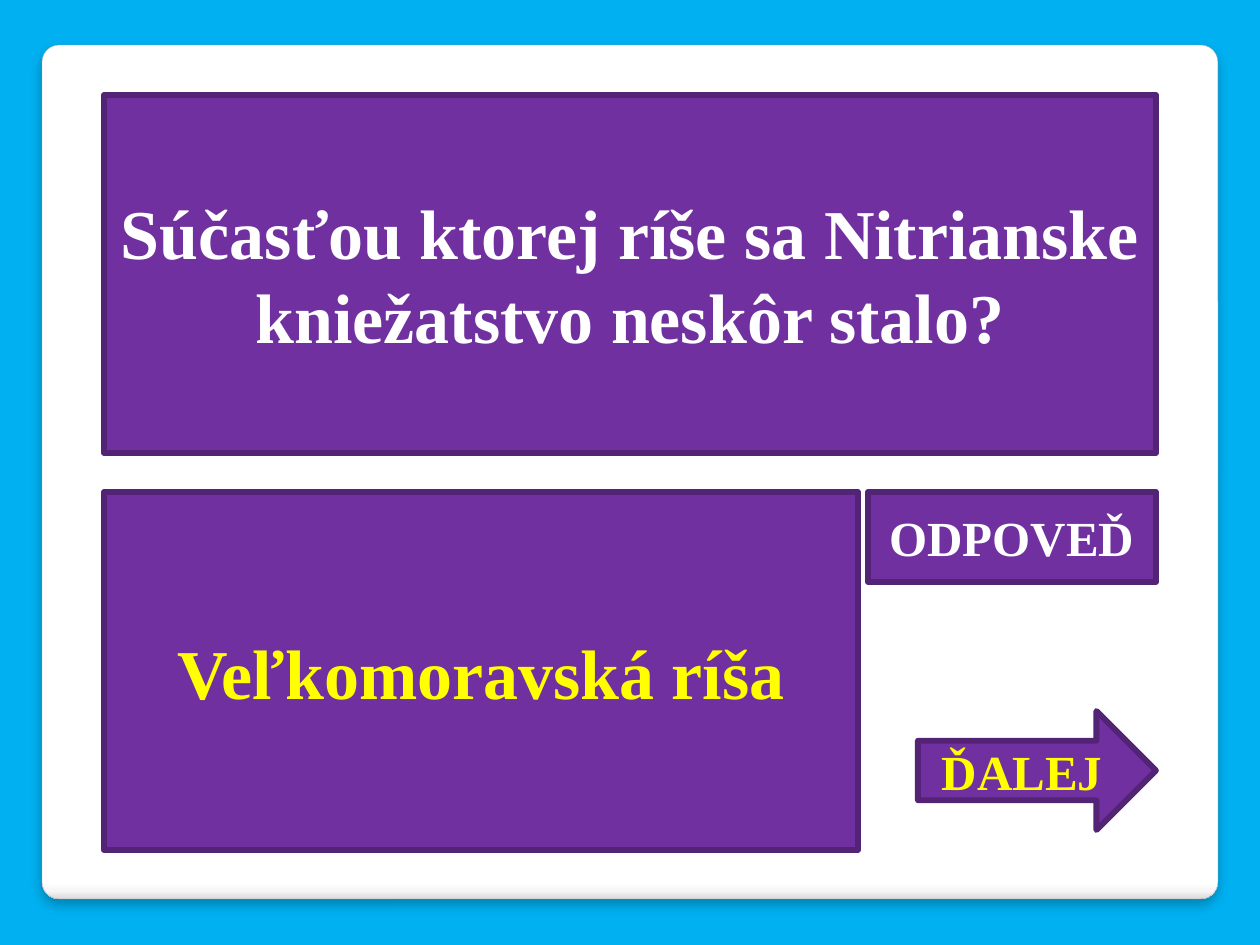
import pptx
import pptx.util
import pptx.oxml
import pptx.oxml.ns
import pptx.dml.color
import pptx.enum.shapes
import pptx.enum.text
import lxml.etree

PX = 914400 // 126
FONT = "Times New Roman"
HUES = {"sky": "00B0F0", "fill": "7030A0", "edge": "532476", "rim": "A4A4A4",
        "white": "FFFFFF", "gold": "FFFF00"}
KINDS = pptx.enum.shapes.MSO_SHAPE

# Content: text, size, colour, box in px
ASK = ("Súčasťou ktorej ríše sa Nitrianske kniežatstvo neskôr stalo?",
       40, "white", (104, 95, 1052, 358))
CARDS = [
    (KINDS.RECTANGLE, ("Veľkomoravská ríša", 40, "gold", (104, 492, 754, 358))),
    (KINDS.RECTANGLE, ("ODPOVEĎ", 28, "white", (868, 492, 288, 90))),
    (KINDS.RIGHT_ARROW, ("ĎALEJ", 28, "gold", (918, 711, 238, 119))),
]
PANEL = (42, 45, 1176, 854)
STOPS = [(0, "FFFFFF"), (98, "FFFFFF"), (99, "F7F7F7"), (100, "DADADA")]


def hue(name):
    return pptx.dml.color.RGBColor.from_string(HUES[name])


def scale(box):
    return [n * PX for n in box]


def node(tag, body):
    space = pptx.oxml.ns.nsdecls("a")
    return pptx.oxml.parse_xml(f"<a:{tag} {space}>{body}</a:{tag}>")


def place(shape, box):
    shape.left, shape.top, shape.width, shape.height = scale(box)


def edge(shape, name, width):
    shape.line.color.rgb = hue(name)
    shape.line.width = pptx.util.Pt(width)


def style(shape, card):
    text, size, tint, box = card
    place(shape, box)
    shape.fill.solid()
    shape.fill.fore_color.rgb = hue("fill")
    edge(shape, "edge", 3.35)
    shape.line._get_or_add_ln().append(node("round", ""))
    frame = shape.text_frame
    frame.word_wrap = True
    frame.auto_size = pptx.enum.text.MSO_AUTO_SIZE.NONE
    frame.vertical_anchor = pptx.enum.text.MSO_ANCHOR.MIDDLE
    para = frame.paragraphs[0]
    para.alignment = pptx.enum.text.PP_ALIGN.CENTER
    run = para.add_run()
    run.text = text
    font = run.font
    font.name, font.size, font.bold = FONT, pptx.util.Pt(size), True
    font.color.rgb = hue(tint)


deck = pptx.Presentation()
deck.slide_width, deck.slide_height = scale((1260, 945))
slide = deck.slides.add_slide(deck.slide_layouts[5])
slide.background.fill.solid()
slide.background.fill.fore_color.rgb = hue("sky")

# White panel with a shaded foot and a soft shadow
panel = slide.shapes.add_shape(KINDS.ROUNDED_RECTANGLE, *scale(PANEL))
panel.adjustments[0] = 0.02
edge(panel, "rim", 0.16)
stops = "".join(f'<a:gs pos="{pos * 1000}"><a:srgbClr val="{tint}"/></a:gs>'
                for pos, tint in STOPS)
props = panel.element.spPr
props.find(pptx.oxml.ns.qn("a:prstGeom")).addnext(
    node("gradFill", f'<a:gsLst>{stops}</a:gsLst><a:lin ang="5400000" scaled="0"/>'))
props.append(node("effectLst",
    '<a:outerShdw blurRad="76200" dist="50800" dir="5400000" algn="t" rotWithShape="0">'
    '<a:srgbClr val="000000"><a:alpha val="25000"/></a:srgbClr></a:outerShdw>'))

# Question, in front of the panel
title = slide.shapes.title
panel.element.addnext(title.element)
style(title, ASK)

# Answer and buttons
for kind, card in CARDS:
    shape = slide.shapes.add_shape(kind, *scale(card[-1]))
    shape.shadow.inherit = False
    style(shape, card)

deck.save("out.pptx")
